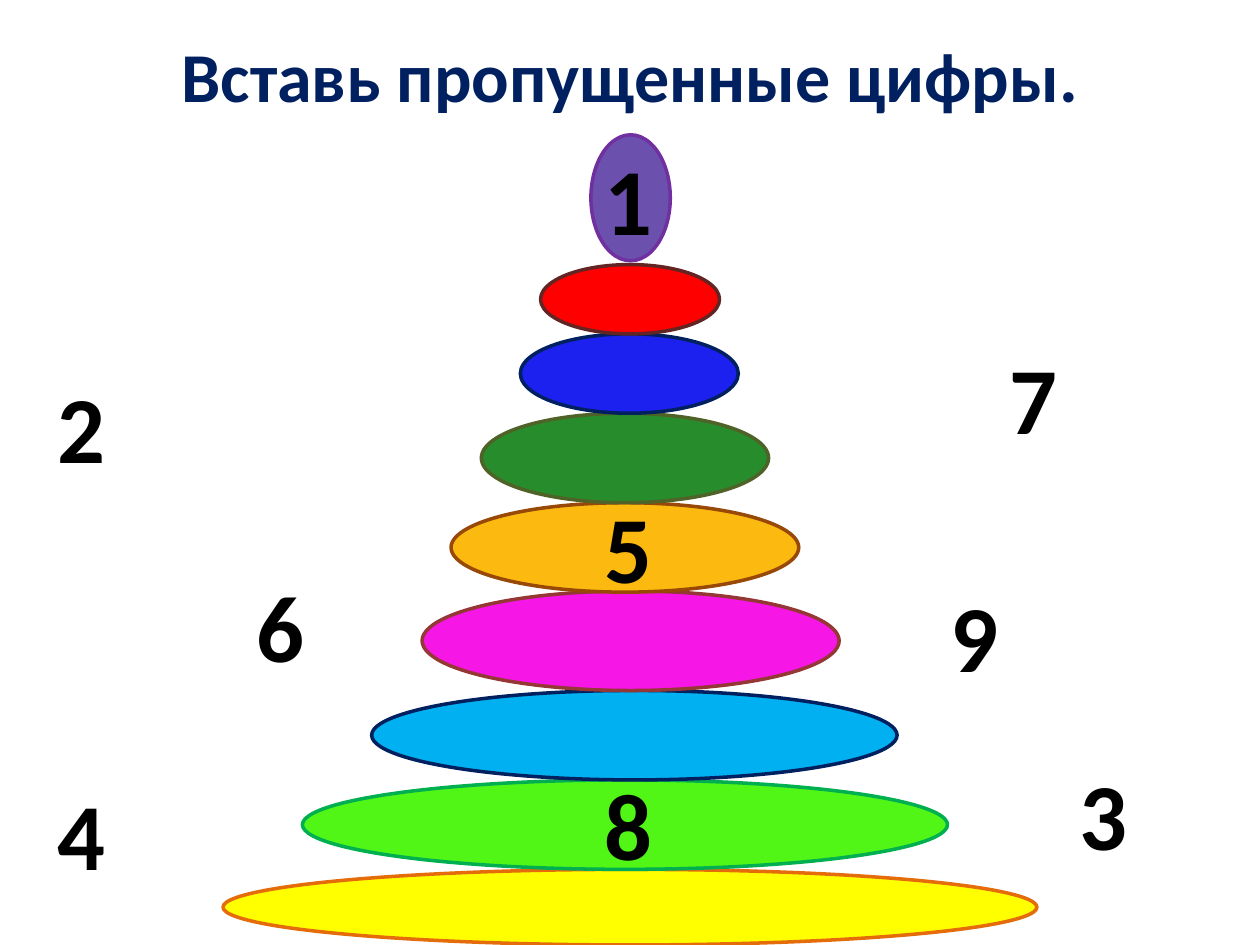
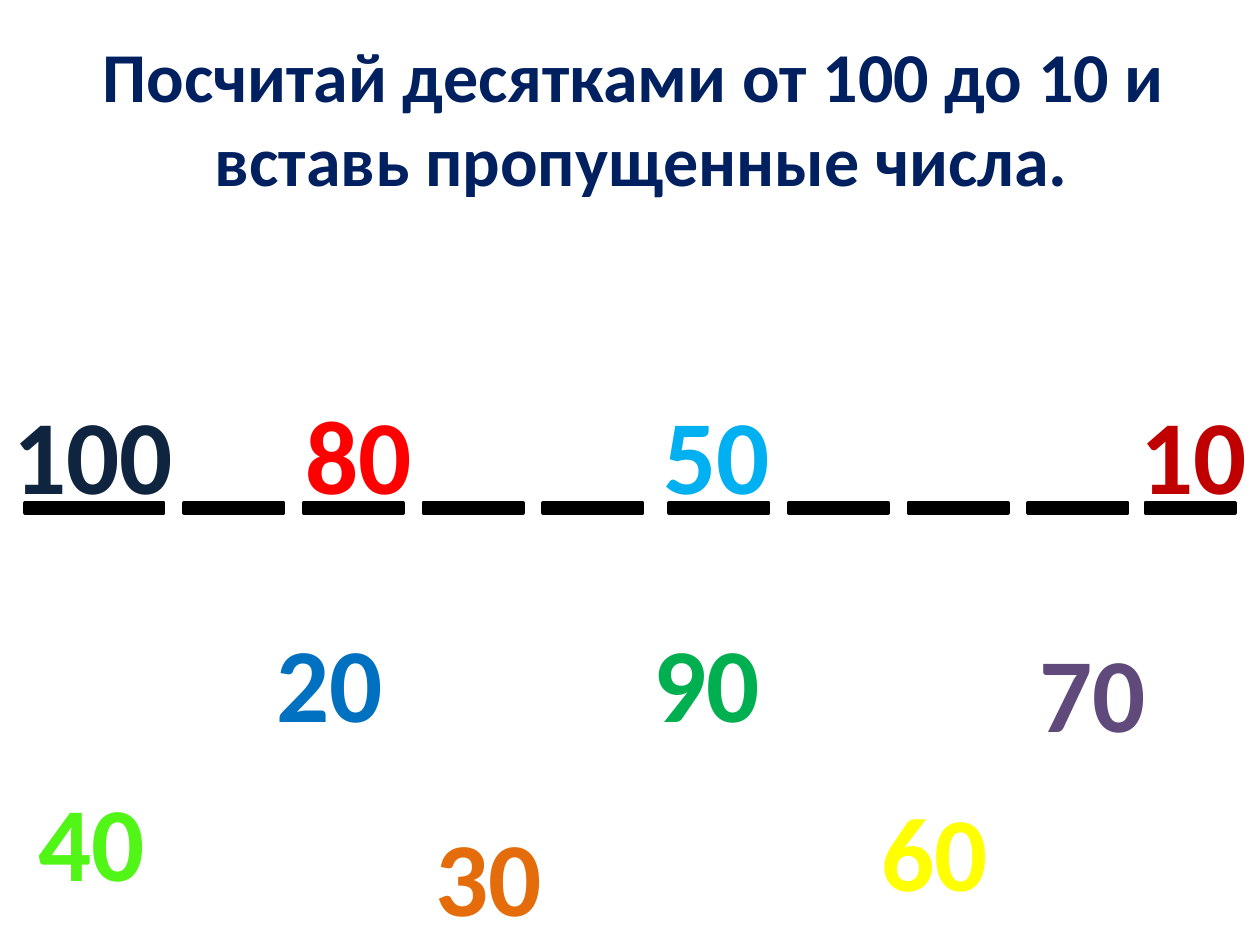
from dataclasses import dataclass

from lxml.etree import SubElement
from pptx import Presentation
from pptx.dml.color import RGBColor
from pptx.enum.shapes import MSO_SHAPE
from pptx.enum.text import MSO_ANCHOR, MSO_AUTO_SIZE, PP_ALIGN
from pptx.oxml.ns import qn
from pptx.util import Inches, Pt


@dataclass(frozen=True)
class Theme:
    font: str = "Calibri"
    title_size: int = 40
    digit_size: int = 54
    number_size: int = 60
    line_width: int = 2
    navy: str = "002060"
    black: str = "000000"
    white: str = "FFFFFF"
    red: str = "FF0000"
    dark_red: str = "C00000"
    yellow: str = "FFFF00"
    orange: str = "E46C0A"
    lime: str = "51F616"
    green: str = "00B050"
    sky: str = "00B0F0"
    blue: str = "0070C0"
    ink: str = "0F243E"
    violet: str = "604A7B"


class Deck:
    def __init__(self, theme):
        self.theme = theme
        self.prs = Presentation()
        self.prs.slide_width, self.prs.slide_height = Inches(10), Inches(7.5)
        self.s = None

    def add_slide(self, title_lines, box):
        self.s = self.prs.slides.add_slide(self.prs.slide_layouts[5])
        sp = self.s.shapes.title
        sp.left, sp.top, sp.width, sp.height = map(Inches, box)
        t = self.theme
        self.set_text(sp, title_lines, t.title_size, t.navy, t.navy)

    def set_text(self, sp, lines, size, color, outline):
        """Fill a shape with centred, bold, outlined lines of text."""
        tf = sp.text_frame
        tf.word_wrap = False
        tf.auto_size = MSO_AUTO_SIZE.SHAPE_TO_FIT_TEXT
        tf.vertical_anchor = MSO_ANCHOR.TOP
        for i, line in enumerate(lines):
            p = tf.add_paragraph() if i else tf.paragraphs[0]
            p.alignment = PP_ALIGN.CENTER
            r = p.add_run()
            r.text = line
            r.font.name = self.theme.font
            r.font.size = Pt(size)
            r.font.bold = True
            r.font.color.rgb = RGBColor.from_string(color)
            self.outline_run(r, outline)

    def outline_run(self, r, color):
        rpr = r._r.get_or_add_rPr()
        ln = SubElement(rpr, qn("a:ln"), w=str(Pt(1)))
        fill = SubElement(ln, qn("a:solidFill"))
        SubElement(fill, qn("a:srgbClr"), val=color)
        rpr.insert(0, ln)

    def text(self, text, box, size, color, outline):
        sp = self.s.shapes.add_textbox(*map(Inches, box))
        self.set_text(sp, [text], size, color, outline)

    def shape(self, kind, box, fill, line):
        sp = self.s.shapes.add_shape(kind, *map(Inches, box))
        sp.shadow.inherit = False
        sp.fill.solid()
        sp.fill.fore_color.rgb = RGBColor.from_string(fill)
        sp.line.color.rgb = RGBColor.from_string(line)
        sp.line.width = Pt(self.theme.line_width)


def build_pyramid(deck):
    t = deck.theme
    deck.add_slide(["Вставь пропущенные цифры."], (1.3, 0.21, 7.4, 0.77))
    rings = [
        ((1.77, 6.9, 6.46, 0.6), t.yellow, t.orange),
        ((2.4, 6.19, 5.12, 0.71), t.lime, t.green),
        ((2.95, 5.48, 4.17, 0.71), t.sky, t.navy),
        ((3.35, 4.69, 3.31, 0.79), "F616E6", "953735"),
        ((3.58, 3.99, 2.76, 0.71), "FCB910", "984807"),
        ((3.82, 3.28, 2.28, 0.71), "278D2C", "4F6228"),
        ((4.13, 2.65, 1.73, 0.63), "1C21F0", t.navy),
        ((4.29, 2.1, 1.42, 0.55), t.red, "632523"),
        ((4.69, 1.07, 0.63, 1), "6B51AD", "7030A0"),
    ]
    for box, fill, line in rings:
        deck.shape(MSO_SHAPE.OVAL, box, fill, line)

    digits = [
        ("1", 4.69, 1.07), ("2", 0.35, 2.88), ("5", 4.69, 3.83),
        ("8", 4.69, 6.03), ("7", 7.91, 2.65), ("4", 0.35, 6.11),
        ("6", 1.93, 4.46), ("3", 8.46, 5.95), ("9", 7.44, 4.54),
    ]
    for digit, left, top in digits:
        deck.text(digit, (left, top, 0.59, 1.01), t.digit_size, t.black, t.white)


def build_tens(deck):
    t = deck.theme
    deck.add_slide(["Посчитай десятками от 100 до 10 и ", "вставь пропущенные числа."],
                   (0.67, 0.21, 8.84, 1.45))
    row_top = 3.04
    numbers = [
        ("60", 6.89, 6.19, t.yellow), ("100", 0, row_top, t.ink),
        ("80", 2.32, row_top, t.red), ("90", 5.08, 4.85, t.green),
        ("70", 8.15, 4.93, t.violet), ("50", 5.16, row_top, t.sky),
        ("40", 0.2, 6.11, t.lime), ("30", 3.35, 6.39, t.orange),
        ("20", 2.09, 4.85, t.blue), ("10", 8.95, row_top, t.dark_red),
    ]
    for number, left, top, color in numbers:
        hundred = number == "100"
        deck.text(number, (left, top, 1.48 if hundred else 1.05, 1.11),
                  t.number_size, color, t.sky if hundred else t.black)

    blank, gap = 0.79, 0.16
    pitch = blank + gap
    blanks = [(0.2, 1.1)]
    for start in (1.46, 5.31):
        blanks += [(start + i * pitch, blank) for i in range(4)]
    blanks.append((9.09, 0.71))
    for left, width in blanks:
        deck.shape(MSO_SHAPE.RECTANGLE, (left, 3.99, width, 0.08), t.black, t.black)


def main():
    deck = Deck(Theme())
    build_pyramid(deck)
    build_tens(deck)
    deck.prs.save("out.pptx")


if __name__ == "__main__":
    main()
